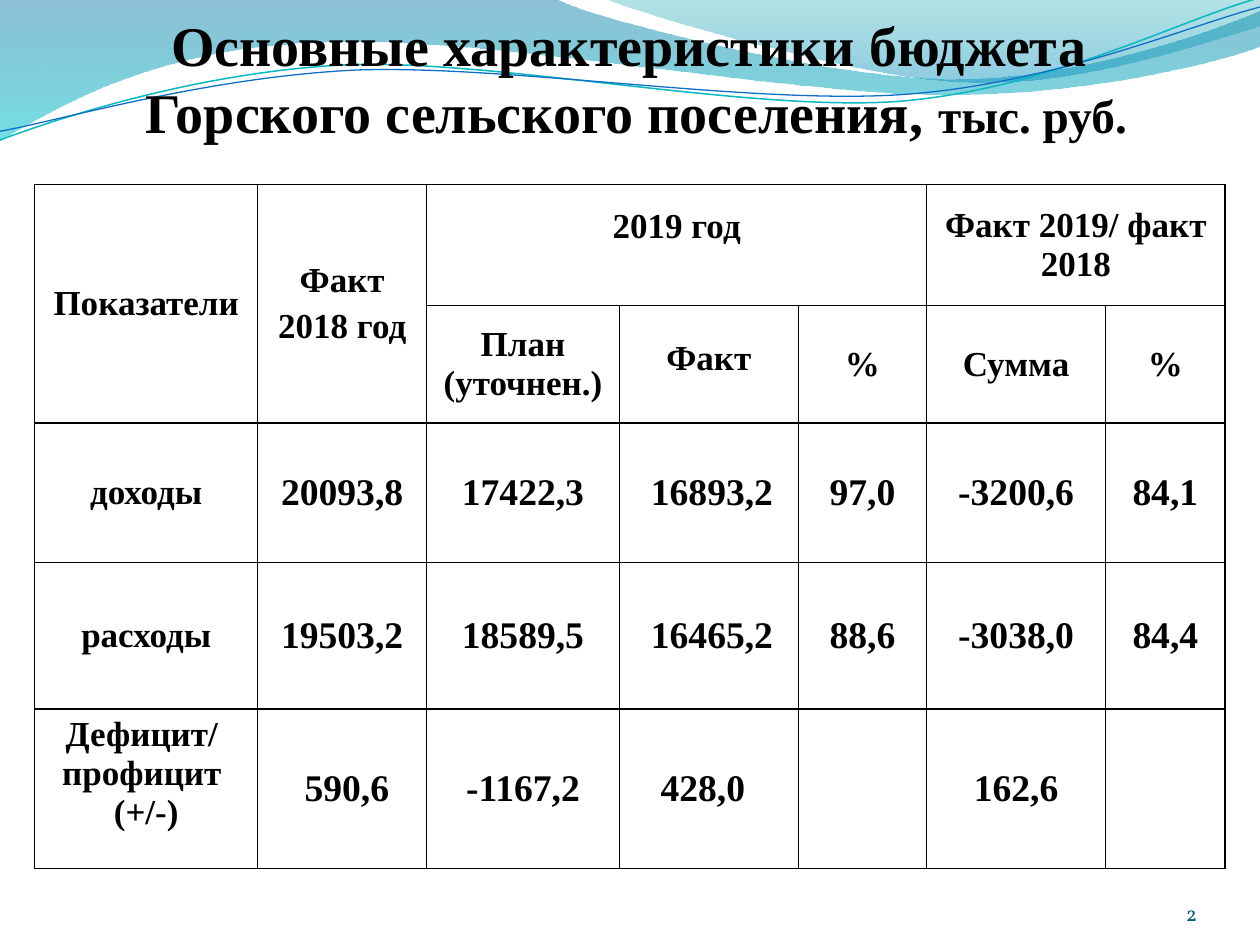
from dataclasses import dataclass

from lxml.etree import SubElement
from pptx import Presentation
from pptx.dml.color import RGBColor as RGB
from pptx.enum.text import MSO_ANCHOR as ANCHOR, PP_ALIGN as ALIGN
from pptx.oxml.ns import qn
from pptx.util import Pt


@dataclass(frozen=True)
class Theme:
    font: str = "Times New Roman"
    number_font: str = "Vollkorn"
    ink: str = "000000"
    number_ink: str = "045D75"
    title: float = 32
    unit: float = 27
    label: float = 20
    figure: float = 21.5
    number: float = 12


T = Theme()

# Paths in points: a pair is a line end, six numbers are a Bezier curve
# Bands: start, path, gradient stops (colour, opacity in percent)
BANDS = [
    ((0, 0), [(317, -1), (343, 12, 478, 45, 546, 45), (614, 45, 690, 19, 720, 6),
              (721, 26), (708, 32, 626, 55, 537, 54), (448, 54, 275, 20, 185, 24),
              (93, 26, 33, 60, -1, 81), (0, 0)],
     [("0074A1", 45), ("00C6CF", 55)]),
    ((345, -1), [(367, 8, 491, 45, 554, 47), (617, 50, 692, 23, 720, 15),
                 (720, 0), (345, -1)],
     [("00A1A9", 30), ("008BBF", 45)]),
]
# Waves: start, path, colour, width
WAVES = [
    ((0, 80), [(35, 67, 114, 41, 199, 37), (284, 34, 427, 64, 513, 58),
               (600, 51, 675, 11, 719, -1)], "0AB8BF", 0.85),
    ((0, 75), [(34, 69, 118, 44, 204, 40), (290, 37, 430, 60, 516, 54),
               (602, 48, 678, 15, 720, 4)], "0F6FC6", 0.75),
]

COLS = [127.5, 96.5, 110.2, 102.2, 73.4, 102.2, 68.4]
ROWS = [69.2, 67, 79.9, 83.5, 91.4]
# "\n" starts a paragraph, "\v" breaks a line
CELLS = [
    ["Показатели", "Факт\n2018 год", "2019 год", "", "", "Факт 2019/ факт 2018", ""],
    ["", "", "План (уточнен.)", "Факт", "%", "Сумма", "%"],
    ["доходы", "20093,8", "17422,3", "16893,2", "97,0", "-3200,6", "84,1"],
    ["расходы", "19503,2", "18589,5", "16465,2", "88,6", "-3038,0", "84,4"],
    ["Дефицит/ \vпрофицит \v(+/-)", "590,6", "-1167,2", "428,0", "", "162,6", ""],
]
SPANS = [((0, 0), (1, 0)), ((0, 1), (1, 1)), ((0, 2), (0, 4)), ((0, 5), (0, 6))]
LEFT_INDENT = {(2, 3): 18, (3, 3): 18, (4, 3): 23.5}


def add_run(p, text, size, color=T.ink, font=T.font, bold=True):
    r = p.add_run()
    r.text = text
    r.font.size, r.font.name, r.font.bold = Pt(size), font, bold
    r.font.color.rgb = RGB.from_string(color)


def add_outline(s, start, path, close):
    """Draw every path point, then join the points of each curve into a Bezier."""
    points = [(Pt(x), Pt(y)) for seg in path for x, y in zip(seg[::2], seg[1::2])]
    builder = s.shapes.build_freeform(Pt(start[0]), Pt(start[1]))
    builder.add_line_segments(points, close=close)
    sp = builder.convert_to_shape()
    sp.shadow.inherit = False
    lines = iter(list(sp.element.iter(qn("a:lnTo"))))
    for seg in path:
        line = next(lines)
        if len(seg) == 6:
            curve = line.makeelement(qn("a:cubicBezTo"), {})
            line.addprevious(curve)
            for part in (line, next(lines), next(lines)):
                curve.append(part[0])
                part.getparent().remove(part)
    return sp


def add_band(s, start, path, stops):
    sp = add_outline(s, start, path, True)
    sp.line.fill.background()
    sp.fill.gradient()
    sp.fill.gradient_angle = 270
    for stop, (color, _) in zip(sp.fill.gradient_stops, stops):
        stop.color.rgb = RGB.from_string(color)
    for clr, (_, opacity) in zip(sp.element.iter(qn("a:srgbClr")), stops):
        SubElement(clr, qn("a:alpha"), val=str(opacity * 1000))


def add_wave(s, start, path, color, width):
    sp = add_outline(s, start, path, False)
    sp.fill.background()
    sp.line.color.rgb = RGB.from_string(color)
    sp.line.width = Pt(width)


def set_title(s):
    sp = s.shapes.title
    sp.element.getparent().append(sp.element)  # in front of the waves
    sp.left, sp.top, sp.width, sp.height = Pt(39.5), Pt(0), Pt(648), Pt(83)
    tf = sp.text_frame
    tf.margin_left = tf.margin_right = tf.margin_bottom = 0
    tf.margin_top = Pt(3.6)
    tf.vertical_anchor = ANCHOR.BOTTOM
    p = tf.paragraphs[0]
    p.alignment = ALIGN.CENTER
    add_run(p, "Основные характеристики бюджета ", T.title)
    p.add_line_break()
    add_run(p, "Горского сельского поселения, ", T.title)
    add_run(p, "тыс. руб.", T.unit)


def set_borders(cell):
    tc_pr = cell._tc.get_or_add_tcPr()
    for i, side in enumerate(("lnL", "lnR", "lnT", "lnB")):
        ln = tc_pr.makeelement(qn(f"a:{side}"), {"w": str(Pt(1))})
        fill = SubElement(ln, qn("a:solidFill"))
        SubElement(fill, qn("a:srgbClr"), val=T.ink)
        tc_pr.insert(i, ln)


def fill_cell(cell, text, size, indent):
    cell.fill.background()
    set_borders(cell)
    cell.vertical_anchor = ANCHOR.MIDDLE
    if indent:
        cell.margin_left = Pt(indent)
    if not text:
        return
    tf = cell.text_frame
    for i, para in enumerate(text.split("\n")):
        p = tf.add_paragraph() if i else tf.paragraphs[0]
        p.alignment = ALIGN.LEFT if indent else ALIGN.CENTER
        if i:
            p.space_before = Pt(4)
        for k, line in enumerate(para.split("\v")):
            if k:
                p.add_line_break()
            add_run(p, line, size)


def add_budget_table(s):
    table = s.shapes.add_table(len(ROWS), len(COLS), Pt(19.8), Pt(105.5),
                               Pt(sum(COLS)), Pt(sum(ROWS))).table
    table.first_row = table.horz_banding = False
    for col, width in zip(table.columns, COLS):
        col.width = Pt(width)
    for row, height in zip(table.rows, ROWS):
        row.height = Pt(height)
    for i, texts in enumerate(CELLS):
        for j, text in enumerate(texts):
            size = T.figure if i > 1 and j else T.label
            fill_cell(table.cell(i, j), text, size, LEFT_INDENT.get((i, j)))
    for first, last in SPANS:
        table.cell(*first).merge(table.cell(*last))
    # Cells whose text sits off the middle
    table.cell(0, 2).margin_bottom = Pt(25)
    table.cell(1, 3).margin_bottom = Pt(10)
    table.cell(4, 1).margin_left = Pt(12.5)
    table.cell(4, 0).vertical_anchor = ANCHOR.TOP


def add_slide_number(s):
    tf = s.shapes.add_textbox(Pt(624), Pt(500.5), Pt(60), Pt(28.5)).text_frame
    tf.word_wrap = True
    tf.margin_left = tf.margin_top = tf.margin_right = tf.margin_bottom = 0
    tf.vertical_anchor = ANCHOR.BOTTOM
    p = tf.paragraphs[0]
    p.alignment = ALIGN.RIGHT
    add_run(p, "2", T.number, T.number_ink, T.number_font, False)


def main():
    prs = Presentation()
    prs.slide_width, prs.slide_height = Pt(720), Pt(540)
    s = prs.slides.add_slide(prs.slide_layouts[5])
    # Decorative header
    for band in BANDS:
        add_band(s, *band)
    for wave in WAVES:
        add_wave(s, *wave)
    # Content
    set_title(s)
    add_budget_table(s)
    add_slide_number(s)
    prs.save("out.pptx")


if __name__ == "__main__":
    main()
